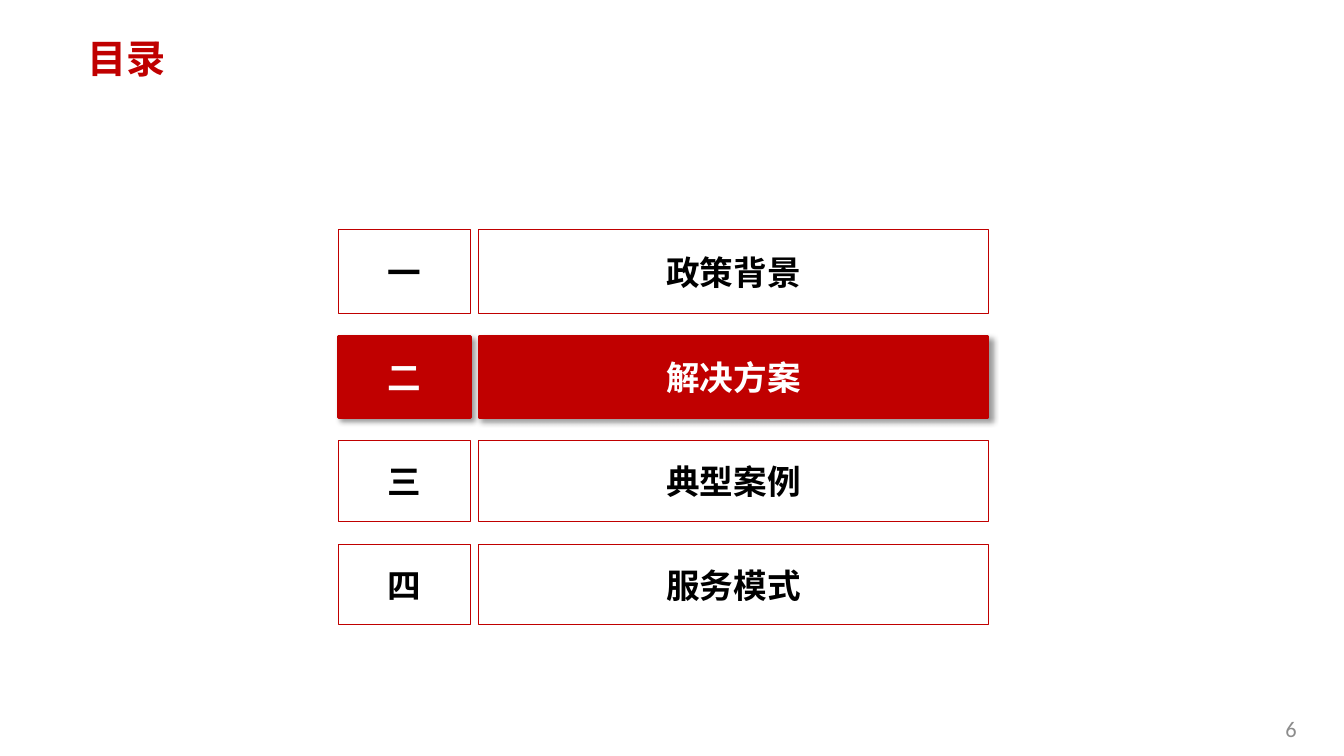
from pptx import Presentation
from pptx.dml.color import RGBColor
from pptx.enum.shapes import MSO_SHAPE
from pptx.enum.text import MSO_ANCHOR, MSO_AUTO_SIZE, PP_ALIGN
from pptx.oxml import parse_xml
from pptx.oxml.ns import nsdecls, qn
from pptx.util import Inches, Pt

COLORS = {"red": "C00000", "black": "000000", "white": "FFFFFF", "gray": "8C8C8C"}
HAN = "Noto Sans CJK SC"


def color(name):
    return RGBColor.from_string(COLORS[name])


def style(para, size, tint, face=HAN, bold=True):
    """Set the paragraph's font for both Latin and Chinese text."""
    font = para.font
    font.size, font.bold, font.name = Pt(size), bold, face
    font.color.rgb = color(tint)
    props = para._p.pPr.find(qn("a:defRPr"))
    props.append(parse_xml(f'<a:ea {nsdecls("a")} typeface="{face}"/>'))


deck = Presentation()
deck.slide_width, deck.slide_height = Inches(13.33), Inches(7.5)
slide = deck.slides.add_slide(deck.slide_layouts[5])

# Title
title = slide.shapes.title
title.left, title.top = Inches(0.77), Inches(0.34)
title.width, title.height = Inches(11.28), Inches(0.72)
frame = title.text_frame
frame.text = "目录"
frame.auto_size = MSO_AUTO_SIZE.NONE
frame.vertical_anchor = MSO_ANCHOR.TOP
para = frame.paragraphs[0]
para.alignment = PP_ALIGN.LEFT
para.line_spacing = 0.9
style(para, 28, "red")

# Agenda: a number column and a topic column, current chapter filled
COLS = [(3.36, 1.31), (4.75, 5.05)]
ROWS = [("一", "政策背景"), ("二", "解决方案"), ("三", "典型案例"), ("四", "服务模式")]
HEIGHTS = [0.83, 0.8, 0.8, 0.8]
GAP = 0.23
CURRENT = 1
SHADOW = f"""<a:effectLst {nsdecls("a")}>
  <a:outerShdw blurRad="{Pt(4)}" dist="{Pt(3)}" dir="2700000" algn="tl" rotWithShape="0">
    <a:srgbClr val="{COLORS["black"]}"><a:alpha val="40000"/></a:srgbClr>
  </a:outerShdw>
</a:effectLst>"""

top = 2.28
for row, (texts, height) in enumerate(zip(ROWS, HEIGHTS)):
    active = row == CURRENT
    for text, (left, width) in zip(texts, COLS):
        box = slide.shapes.add_shape(
            MSO_SHAPE.RECTANGLE, Inches(left), Inches(top), Inches(width), Inches(height))
        box.shadow.inherit = False
        box.line.color.rgb = color("red")
        box.line.width = Pt(2 if active else 0.75)
        if active:
            box.fill.solid()
            box.fill.fore_color.rgb = color("red")
            props = box._element.spPr
            props.replace(props.find(qn("a:effectLst")), parse_xml(SHADOW))
        else:
            box.fill.background()
        frame = box.text_frame
        frame.margin_left = frame.margin_right = frame.margin_top = frame.margin_bottom = 0
        frame.word_wrap = True
        frame.vertical_anchor = MSO_ANCHOR.MIDDLE
        frame.text = text
        para = frame.paragraphs[0]
        para.alignment = PP_ALIGN.CENTER
        style(para, 24, "white" if active else "black")
    top += height + GAP

# Page number
page = slide.shapes.add_textbox(Inches(12.65), Inches(7.05), Inches(0.46), Inches(0.37))
page.text_frame.word_wrap = False
page.text_frame.auto_size = MSO_AUTO_SIZE.SHAPE_TO_FIT_TEXT
page.text_frame.text = "6"
para = page.text_frame.paragraphs[0]
para.alignment = PP_ALIGN.LEFT
style(para, 16, "gray", "Calibri", False)

deck.save("out.pptx")
